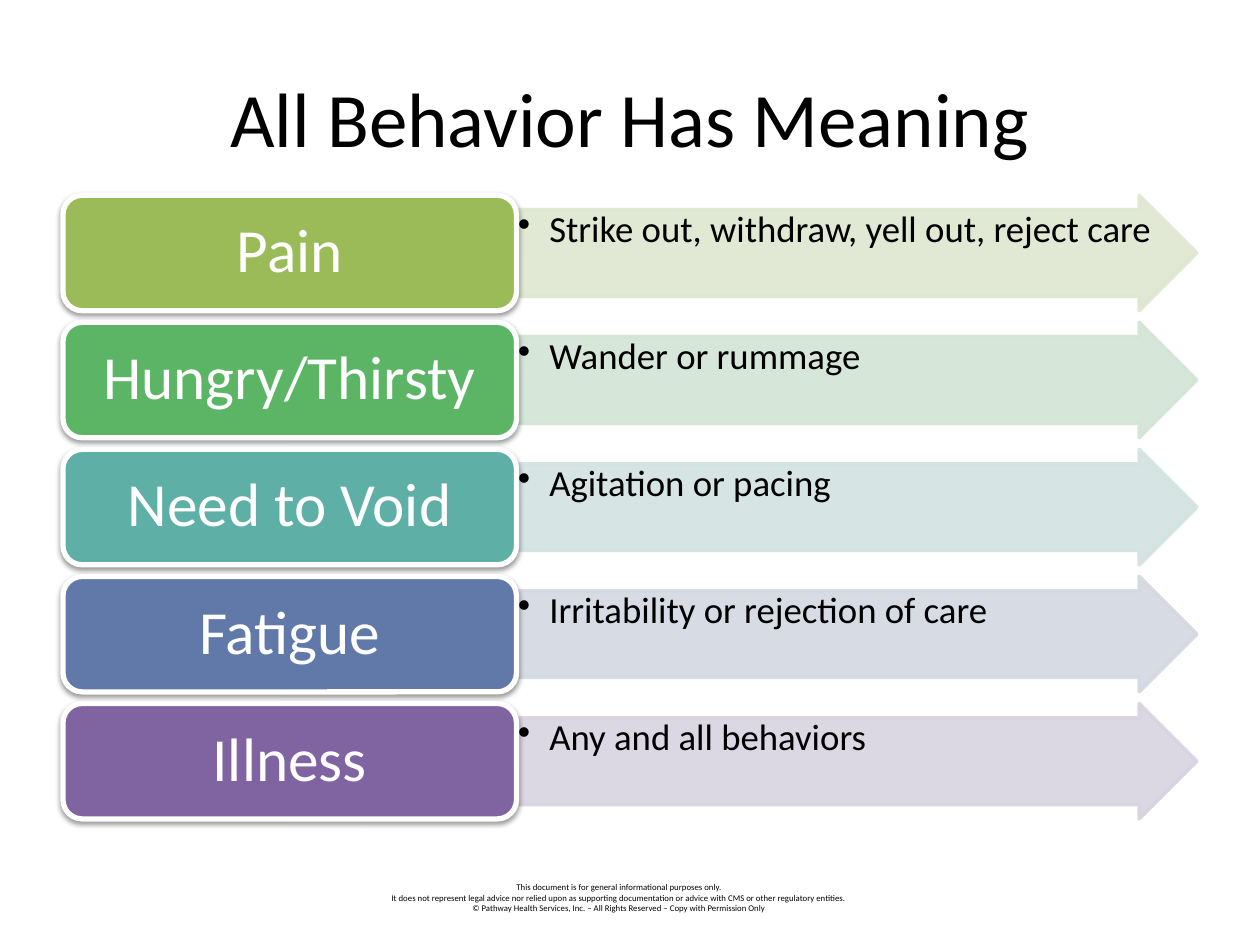
from dataclasses import dataclass
from typing import Any, NamedTuple

from lxml.etree import SubElement
from pptx import Presentation
from pptx.dml.color import RGBColor
from pptx.enum.shapes import MSO_SHAPE
from pptx.enum.text import MSO_ANCHOR, PP_ALIGN
from pptx.oxml.ns import qn
from pptx.util import Inches, Pt


@dataclass(frozen=True)
class Theme:
    font: str = "Calibri"
    ink: str = "000000"
    paper: str = "FFFFFF"
    title_size: float = 44
    cause_size: float = 35
    behavior_size: float = 21
    notice_size: float = 5
    arrow_opacity: int = 90
    shadow_opacity: int = 38


class Box(NamedTuple):
    """Position and size as shares of the slide."""
    left: float
    top: float
    width: float
    height: float


class Meaning(NamedTuple):
    cause: str
    behavior: str
    color: str
    tint: str


THEME = Theme()
SLIDE_WIDTH, SLIDE_HEIGHT = Inches(10), Inches(7.5)
TITLE_BOX = Box(0.05, 0.04, 0.9, 1 / 6)
NOTICE_BOX = Box(0.275, 6.95 / 7.5, 0.433, 0.35 / 7.5)
GRID = Box(0.05, 1.55 / 7.5, 0.9, 0.66)
CAUSE_SHARE = 0.4
GAP_SHARE = 0.1  # gap between rows, as a share of the row height

MEANINGS = [
    Meaning("Pain", "Strike out, withdraw, yell out, reject care", "9BBB59", "DEE7D1"),
    Meaning("Hungry/Thirsty", "Wander or rummage", "5CB565", "D2E5D5"),
    Meaning("Need to Void", "Agitation or pacing", "5EAFA6", "D2E3E2"),
    Meaning("Fatigue", "Irritability or rejection of care", "6179A8", "D3D8E2"),
    Meaning("Illness", "Any and all behaviors", "8064A2", "D8D3E0"),
]
NOTICE = [
    "This document is for general informational purposes only.",
    "It does not represent legal advice nor relied upon as supporting documentation"
    " or advice with CMS or other regulatory entities.",
    "© Pathway Health Services, Inc. – All Rights Reserved – Copy with Permission Only",
]


def set_all(target: Any, values: dict[str, Any]) -> None:
    for name, value in values.items():
        setattr(target, name, value)


def place(box: Box) -> tuple[int, int, int, int]:
    return (round(box.left * SLIDE_WIDTH), round(box.top * SLIDE_HEIGHT),
            round(box.width * SLIDE_WIDTH), round(box.height * SLIDE_HEIGHT))


def write(frame: Any, lines: list[str], size: float, color: str,
          paragraph_format: dict[str, Any], frame_format: dict[str, Any]) -> None:
    set_all(frame, {"word_wrap": True, **frame_format})
    for index, line in enumerate(lines):
        paragraph = frame.add_paragraph() if index else frame.paragraphs[0]
        set_all(paragraph, paragraph_format)
        run = paragraph.add_run()
        run.text = line
        set_all(run.font, {"name": THEME.font, "size": Pt(size)})
        run.font.color.rgb = RGBColor.from_string(color)


def margins(horizontal: float, vertical: float) -> dict[str, Any]:
    return {"margin_left": Inches(horizontal), "margin_right": Inches(horizontal),
            "margin_top": Inches(vertical), "margin_bottom": Inches(vertical)}


def add_text(slide: Any, box: Box, lines: list[str], size: float,
             anchor: MSO_ANCHOR) -> None:
    frame = slide.shapes.add_textbox(*place(box)).text_frame
    write(frame, lines, size, THEME.ink, {"alignment": PP_ALIGN.CENTER},
          {"vertical_anchor": anchor})


def add_block(slide: Any, kind: MSO_SHAPE, box: Box, fill: str, line: str,
              line_width: float) -> Any:
    block = slide.shapes.add_shape(kind, *place(box))
    block.shadow.inherit = False
    block.fill.solid()
    block.fill.fore_color.rgb = RGBColor.from_string(fill)
    block.line.color.rgb = RGBColor.from_string(line)
    block.line.width = Pt(line_width)
    return block


def set_opacity(color: Any, percent: int) -> None:
    SubElement(color, qn("a:alpha"), val=str(percent * 1000))


def add_soft_shadow(block: Any) -> None:
    effects = block._element.spPr.find(qn("a:effectLst"))
    shadow = SubElement(effects, qn("a:outerShdw"), blurRad=str(Pt(3.1)),
                        dist=str(Pt(1.6)), dir=str(90 * 60000), rotWithShape="0")
    set_opacity(SubElement(shadow, qn("a:srgbClr"), val=THEME.ink), THEME.shadow_opacity)


def add_bullet(paragraph: Any) -> None:
    properties = paragraph._p.get_or_add_pPr()
    set_indent = {"marL": Inches(0.25), "indent": Inches(-0.25)}
    for name, value in set_indent.items():
        properties.set(name, str(value))
    SubElement(properties, qn("a:buChar"), char="•")


def add_behavior(slide: Any, box: Box, meaning: Meaning) -> None:
    arrow = add_block(slide, MSO_SHAPE.RIGHT_ARROW, box, meaning.tint, meaning.tint, 2)
    arrow.adjustments[0] = 0.75
    for color in arrow._element.spPr.iter(qn("a:srgbClr")):
        set_opacity(color, THEME.arrow_opacity)
    write(arrow.text_frame, [meaning.behavior], THEME.behavior_size, THEME.ink,
          {"alignment": PP_ALIGN.LEFT, "line_spacing": 0.9},
          {"vertical_anchor": MSO_ANCHOR.TOP, **margins(0.01, 0.01)})
    add_bullet(arrow.text_frame.paragraphs[0])


def add_cause(slide: Any, box: Box, meaning: Meaning) -> None:
    card = add_block(slide, MSO_SHAPE.ROUNDED_RECTANGLE, box, meaning.color, THEME.paper, 3)
    add_soft_shadow(card)
    write(card.text_frame, [meaning.cause], THEME.cause_size, THEME.paper,
          {"alignment": PP_ALIGN.CENTER, "line_spacing": 0.9},
          {"vertical_anchor": MSO_ANCHOR.MIDDLE, **margins(0.15, 0.07)})


def add_meanings(slide: Any) -> None:
    count = len(MEANINGS)
    row_height = GRID.height / (count + (count - 1) * GAP_SHARE)
    cause_width = GRID.width * CAUSE_SHARE
    for row, meaning in enumerate(MEANINGS):
        top = GRID.top + row * row_height * (1 + GAP_SHARE)
        add_behavior(slide, Box(GRID.left + cause_width, top,
                                GRID.width - cause_width, row_height), meaning)
        add_cause(slide, Box(GRID.left, top, cause_width, row_height), meaning)


def main() -> None:
    presentation = Presentation()
    set_all(presentation, {"slide_width": SLIDE_WIDTH, "slide_height": SLIDE_HEIGHT})
    slide = presentation.slides.add_slide(presentation.slide_layouts[6])
    add_text(slide, NOTICE_BOX, NOTICE, THEME.notice_size, MSO_ANCHOR.TOP)
    add_text(slide, TITLE_BOX, ["All Behavior Has Meaning"], THEME.title_size,
             MSO_ANCHOR.MIDDLE)
    add_meanings(slide)
    presentation.save("out.pptx")


if __name__ == "__main__":
    main()
